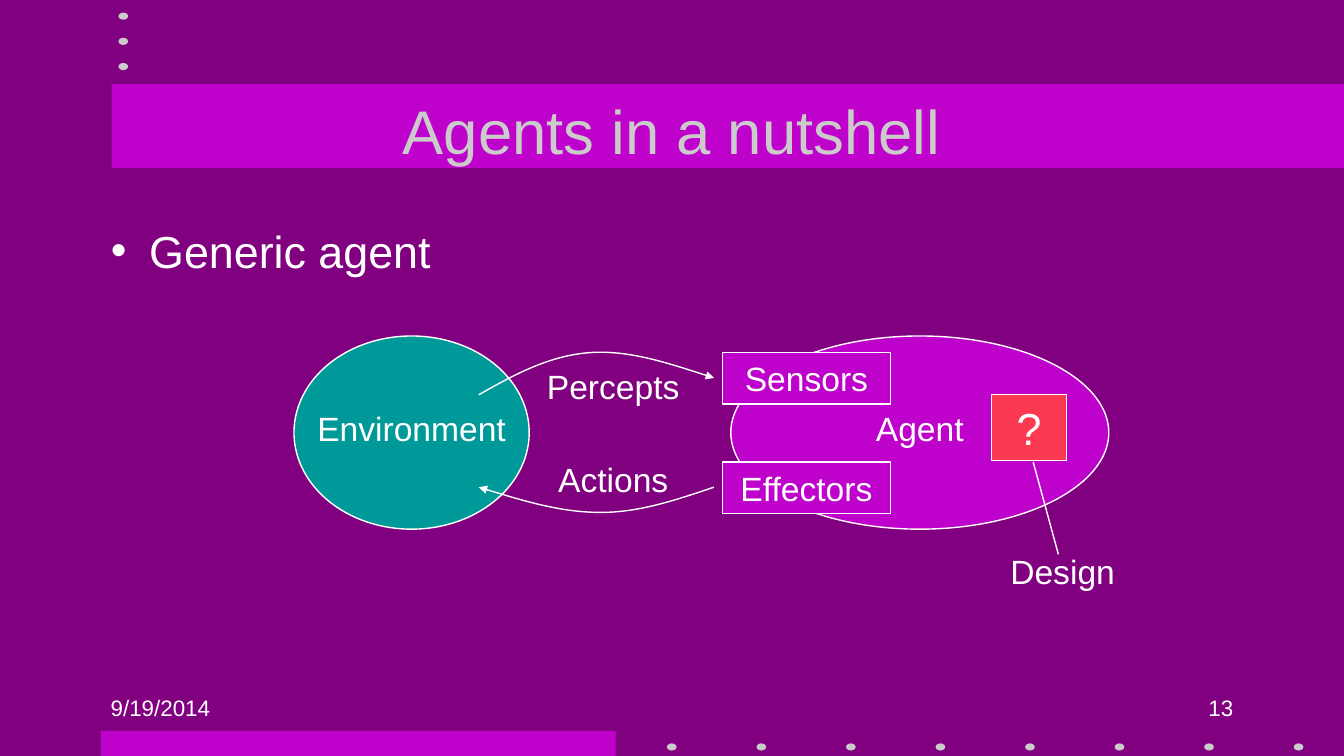
from dataclasses import dataclass

from lxml.etree import SubElement
from pptx import Presentation
from pptx.dml.color import RGBColor
from pptx.enum.shapes import MSO_CONNECTOR, MSO_SHAPE
from pptx.enum.text import MSO_ANCHOR as Anchor, PP_ALIGN as Align
from pptx.oxml.ns import qn
from pptx.util import Inches, Pt

PURPLE = RGBColor(0x80, 0x00, 0x80)
MAGENTA = RGBColor(0xBE, 0x02, 0xCC)
GREY = RGBColor(0xCB, 0xCB, 0xCB)
WHITE = RGBColor(0xFF, 0xFF, 0xFF)
TEAL = RGBColor(0x00, 0x99, 0x99)
RED = RGBColor(0xFB, 0x39, 0x50)

# The slide is a grid of 160 columns by 90 rows of square cells.
COLUMNS, ROWS = 160, 90
CELL = Inches(1) / 12
FONT = "Arial"


@dataclass
class Box:
    left: float
    top: float
    width: float
    height: float

    def inner(self, left, top, width, height):
        """Return a box whose position is counted from this box's corner."""
        return Box(self.left + left, self.top + top, width, height)

    def point(self, column, row):
        return round((self.left + column) * CELL), round((self.top + row) * CELL)

    def frame(self):
        return (*self.point(0, 0), round(self.width * CELL), round(self.height * CELL))


def write(shape, text, size=24, color=WHITE, align=Align.CENTER, anchor=Anchor.TOP):
    frame = shape.text_frame
    frame.word_wrap = True
    frame.vertical_anchor = anchor
    para = frame.paragraphs[0]
    para.alignment = align
    run = para.add_run()
    run.text = text
    run.font.name = FONT
    run.font.size = Pt(size)
    run.font.color.rgb = color
    return para


def add_label(page, box, text, **style):
    write(page.shapes.add_textbox(*box.frame()), text, **style)


def outline(shape):
    shape.line.color.rgb = WHITE
    shape.line.width = Pt(1)


def add_filled(page, kind, box, color, outlined=False):
    shape = page.shapes.add_shape(kind, *box.frame())
    shape.shadow.inherit = False
    shape.fill.solid()
    shape.fill.fore_color.rgb = color
    if outlined:
        outline(shape)
    else:
        shape.line.fill.background()
    return shape


def add_caption_box(page, box, text, color, size=24):
    shape = add_filled(page, MSO_SHAPE.RECTANGLE, box, color, outlined=True)
    write(shape, text, size, anchor=Anchor.MIDDLE)


def add_dots(page, box, count, step_x, step_y):
    for index in range(count):
        dot = box.inner(index * step_x, index * step_y, 1.15, 0.85)
        add_filled(page, MSO_SHAPE.OVAL, dot, GREY)


def add_curved_arrow(page, box, points, end):
    """Draw Bezier curves: a start, then two controls and a stop for each."""
    start, *others = [box.point(*point) for point in points]
    builder = page.shapes.build_freeform(*start)
    builder.add_line_segments(others, close=False)
    curve = builder.convert_to_shape()
    curve.shadow.inherit = False
    curve.fill.background()
    outline(curve)
    segments = list(curve.element.iter(qn("a:lnTo")))
    for first in range(0, len(segments), 3):
        bezier = SubElement(segments[first].getparent(), qn("a:cubicBezTo"))
        for segment in segments[first:first + 3]:
            bezier.append(segment[0])
            segment.getparent().remove(segment)
    SubElement(curve.element.spPr.find(qn("a:ln")), qn(end), type="triangle")


def draw_decoration(page, box):
    for band in (box.inner(12, 87, 61.3, 3), box.inner(13.3, 10, 146.7, 10)):
        add_filled(page, MSO_SHAPE.RECTANGLE, band, MAGENTA)
    add_dots(page, box.inner(79.4, 88.5, 0, 0), 8, 10.66, 0)
    add_dots(page, box.inner(14.1, 1.5, 0, 0), 3, 0, 3)


def place(page, placeholder, box):
    """Move a placeholder into the box and in front of the decoration."""
    page.shapes.element.append(placeholder.element)
    placeholder.left, placeholder.top, placeholder.width, placeholder.height = box.frame()


def fill_title(page, box):
    title = page.shapes.title
    place(page, title, box)
    write(title, "Agents in a nutshell", 44, GREY, anchor=Anchor.MIDDLE)


def fill_body(page, box):
    body = page.placeholders[1]
    place(page, body, box)
    para = write(body, "Generic agent", 32, align=Align.LEFT)
    properties = para._p.get_or_add_pPr()
    properties.set("marL", str(Inches(0.38)))
    properties.set("indent", str(-Inches(0.38)))
    SubElement(properties, qn("a:buChar"), char="•")


def draw_footer(page, box):
    half = box.width / 2
    add_label(page, box.inner(0, 0, half, box.height), "9/19/2014", size=16, align=Align.LEFT)
    add_label(page, box.inner(half, 0, half, box.height), "13", size=16, align=Align.RIGHT)


def draw_environment(page, box):
    add_filled(page, MSO_SHAPE.OVAL, box, TEAL, outlined=True)
    label = add_filled(page, MSO_SHAPE.RECTANGLE, box.inner(1.1, 8, 25.8, 6), TEAL)
    write(label, "Environment")


def draw_signals(page, box):
    percepts = [(0, 5), (4.2, 2.6), (8.3, 0.4), (13, 0), (17.6, -0.4), (22.8, 1.3), (28, 3)]
    actions = [(0, 16), (4.9, 17.5), (9.8, 19), (14.5, 19), (19.2, 19), (23.5, 17.5), (28, 16)]
    add_curved_arrow(page, box, percepts, "a:tailEnd")
    add_curved_arrow(page, box, actions, "a:headEnd")
    for row, text in ((1, "Percepts"), (12, "Actions")):
        add_label(page, box.inner(6, row, 20, 6), text)


def draw_agent(page, box):
    add_filled(page, MSO_SHAPE.OVAL, box, MAGENTA, outlined=True)
    add_label(page, box.inner(1.8, 8, 41.4, 6), "Agent")
    for row, text in ((15, "Effectors"), (2, "Sensors")):
        add_caption_box(page, box.inner(-1, row, 20, 6.1), text, MAGENTA)


def draw_design(page, box):
    add_caption_box(page, box.inner(1, 0, 9, 7.8), "?", RED, 32)
    line = page.shapes.add_connector(
        MSO_CONNECTOR.STRAIGHT, *box.point(6, 8), *box.point(9, 19))
    outline(line)
    SubElement(line.element.spPr, qn("a:effectLst"))
    add_label(page, box.inner(0, 18, box.width, 6), "Design")


def draw_diagram(page, box):
    draw_environment(page, box.inner(0, 0, 28, 23))
    draw_signals(page, box.inner(22, 2, 28, 19))
    draw_agent(page, box.inner(52, 0, 45, 23))
    draw_design(page, box.inner(82, 7, 19, 24))


def main():
    deck = Presentation()
    deck.slide_width = round(COLUMNS * CELL)
    deck.slide_height = round(ROWS * CELL)
    page = deck.slides.add_slide(deck.slide_layouts[1])
    page.background.fill.solid()
    page.background.fill.fore_color.rgb = PURPLE

    whole = Box(0, 0, COLUMNS, ROWS)
    draw_decoration(page, whole)
    draw_footer(page, whole.inner(12, 82, 136, 6))
    fill_body(page, whole.inner(12, 26, 136, 54))
    draw_diagram(page, whole.inner(35, 40, 101, 31))
    fill_title(page, whole.inner(25, 8, 110, 15))
    deck.save("out.pptx")


if __name__ == "__main__":
    main()
